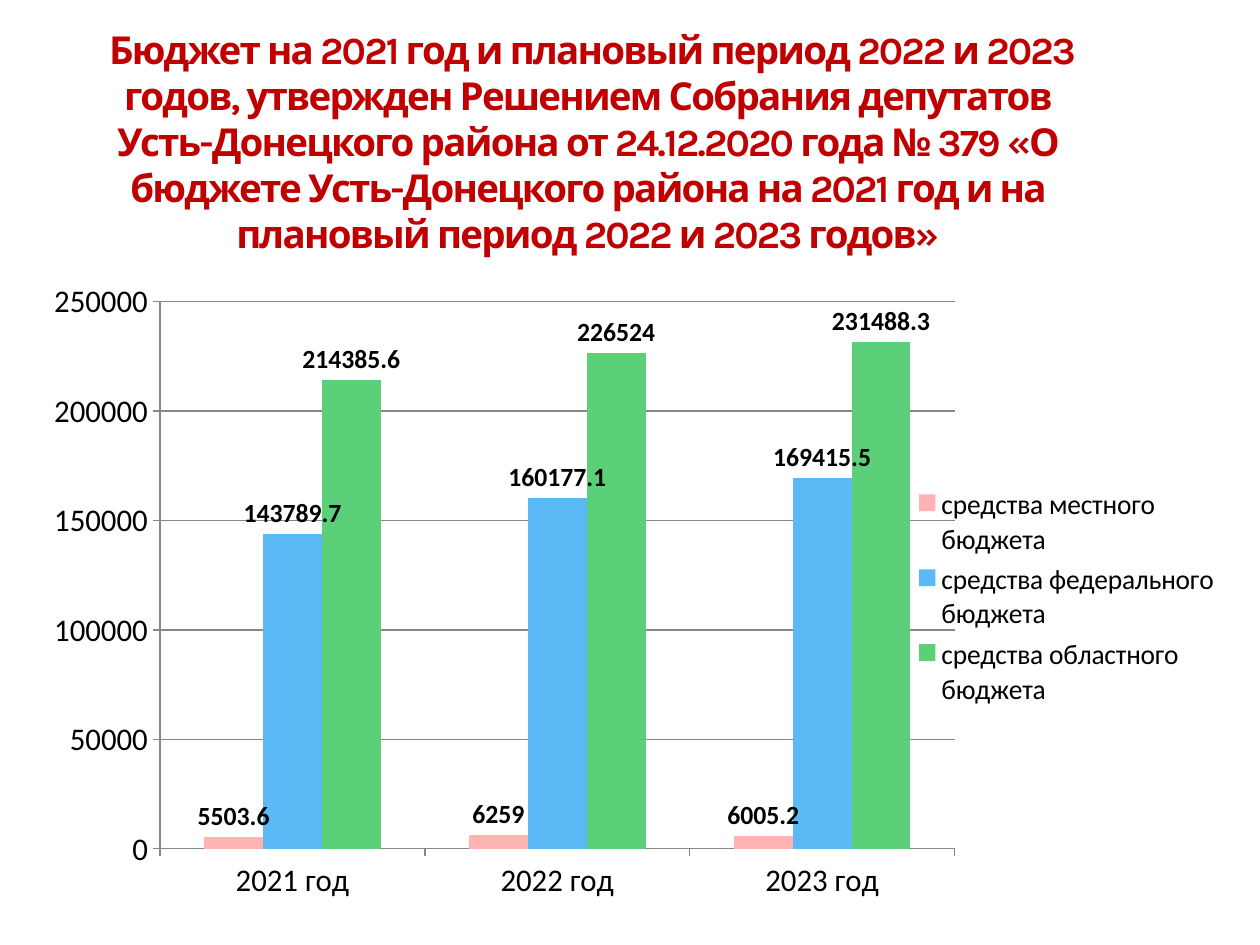
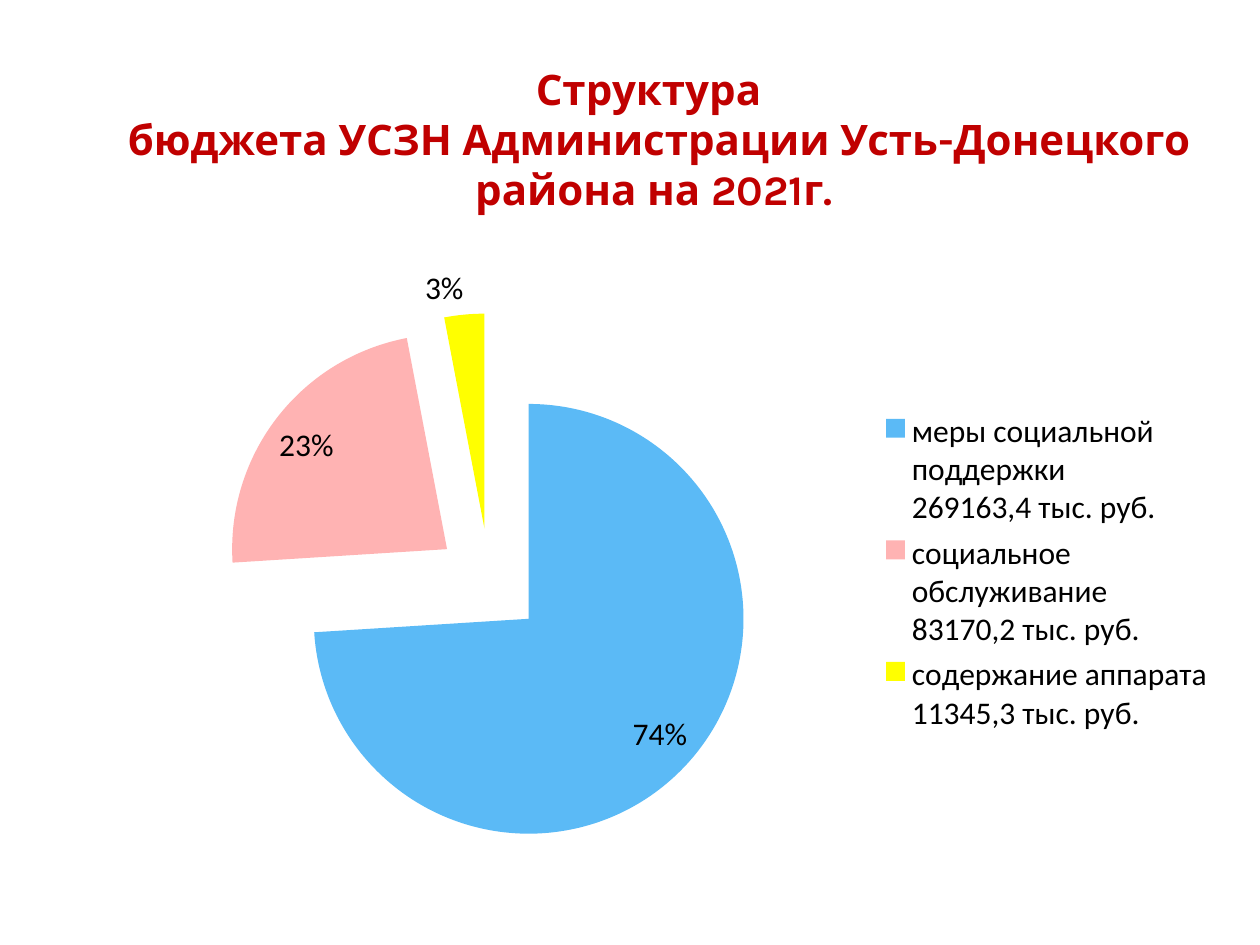
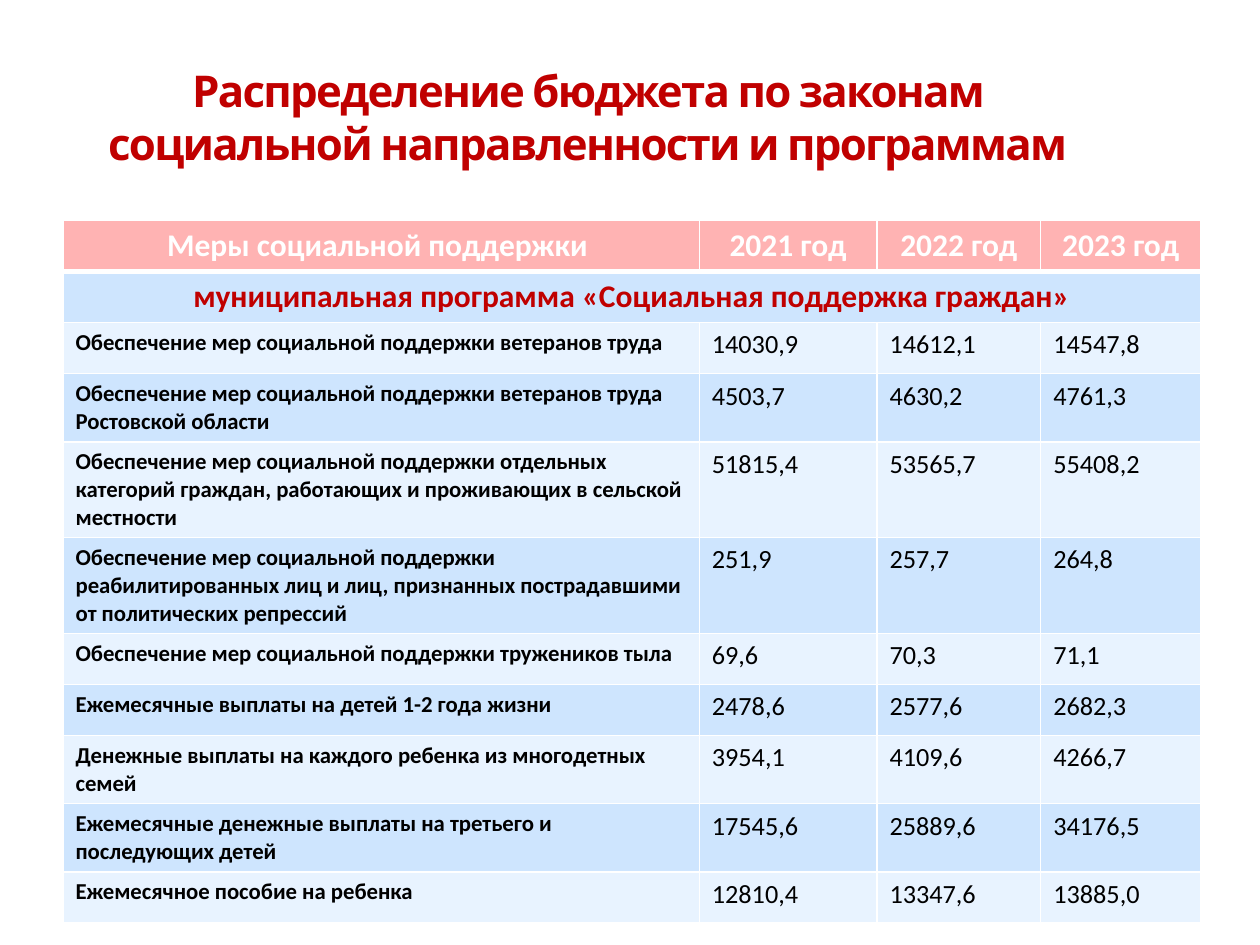
from dataclasses import dataclass

from lxml.etree import SubElement
from pptx import Presentation
from pptx.chart.data import CategoryChartData
from pptx.dml.color import RGBColor
from pptx.enum.chart import XL_CHART_TYPE, XL_LABEL_POSITION, XL_LEGEND_POSITION, XL_TICK_MARK
from pptx.enum.text import MSO_ANCHOR, MSO_AUTO_SIZE, PP_ALIGN
from pptx.oxml import parse_xml
from pptx.oxml.ns import nsdecls, qn
from pptx.util import Inches, Pt


@dataclass(frozen=True)
class Theme:
    title_font: str = "Karla"
    body_font: str = "Calibri"
    red: str = "C00000"
    black: str = "000000"
    white: str = "FFFFFF"
    grey: str = "878787"
    pink: str = "FFB3B3"
    blue: str = "5BBAF6"
    green: str = "5BD078"
    yellow: str = "FFFF00"
    band_dark: str = "CEE5FE"
    band_light: str = "E8F3FF"
    chart_size: int = 18
    legend_size: int = 16
    label_size: int = 15
    heading_size: int = 18
    measure_size: int = 13
    amount_size: int = 15
    thin_line: float = 1
    thick_line: float = 3


def color(code):
    return RGBColor.from_string(code)


def style_font(font, name, size, code, bold):
    font.name, font.size, font.bold = name, Pt(size), bold
    font.color.rgb = color(code)


def manual_layout(x, y, width, height, inner=False):
    """Chart layout whose measures are fractions of the chart frame."""
    layout = parse_xml(f"<c:layout {nsdecls('c')}><c:manualLayout/></c:layout>")
    settings = [("layoutTarget", "inner")] if inner else []
    settings += [("xMode", "edge"), ("yMode", "edge"),
                 ("x", x), ("y", y), ("w", width), ("h", height)]
    for tag, value in settings:
        SubElement(layout[0], qn(f"c:{tag}")).set("val", str(value))
    return layout


def remove_layout(element):
    for layout in element.findall(qn("c:layout")):
        element.remove(layout)


class BudgetDeck:
    def __init__(self, theme):
        self.theme = theme
        self.deck = Presentation()
        self.deck.slide_width, self.deck.slide_height = Inches(10), Inches(7.5)
        self.page = None

    def add_page(self, title, width, height, size, spacing=0):
        """Start a slide; spacing is the title's letter spacing in points."""
        self.page = self.deck.slides.add_slide(self.deck.slide_layouts[5])
        box = self.page.shapes.title
        box.left, box.top = Inches(0.5), Inches(0.3)
        box.width, box.height = Inches(width), Inches(height)
        frame = box.text_frame
        frame.text = title
        frame.word_wrap = True
        frame.auto_size = MSO_AUTO_SIZE.NONE
        frame.vertical_anchor = MSO_ANCHOR.MIDDLE
        para = frame.paragraphs[0]
        para.alignment = PP_ALIGN.CENTER
        for span in para.runs:
            style_font(span.font, self.theme.title_font, size, self.theme.red, True)
            if spacing:
                span.font._element.set("spc", str(spacing * 100))

    def add_chart(self, kind, frame, data, plot_area, legend_area, legend_size):
        chart = self.page.shapes.add_chart(kind, *map(Inches, frame), data).chart
        style_font(chart.font, self.theme.body_font, self.theme.chart_size,
                   self.theme.black, False)
        chart.has_title = False
        area = chart._chartSpace.chart.plotArea
        remove_layout(area)
        area.insert(0, manual_layout(*plot_area, inner=True))

        chart.has_legend = True
        legend = chart.legend
        legend.position = XL_LEGEND_POSITION.RIGHT
        legend.include_in_layout = False
        style_font(legend.font, self.theme.body_font, legend_size, self.theme.black, False)
        remove_layout(legend._element)
        legend._element.find(qn("c:legendPos")).addnext(manual_layout(*legend_area))
        return chart

    def add_column_chart(self, frame, categories, series, plot_area, legend_area):
        """Series are (name, values, color)."""
        data = CategoryChartData()
        data.categories = categories
        for name, values, _ in series:
            data.add_series(name, values)
        chart = self.add_chart(XL_CHART_TYPE.COLUMN_CLUSTERED, frame, data, plot_area,
                               legend_area, self.theme.legend_size)
        plot = chart.plots[0]
        plot.gap_width, plot.vary_by_categories = 150, False
        for columns, (_, _, code) in zip(plot.series, series):
            columns.format.fill.solid()
            columns.format.fill.fore_color.rgb = color(code)
            labels = columns.data_labels
            labels.show_value = True
            labels.position = XL_LABEL_POSITION.OUTSIDE_END
            style_font(labels.font, self.theme.body_font, self.theme.label_size,
                       self.theme.black, True)

        chart.value_axis.has_major_gridlines = True
        chart.value_axis.minimum_scale = 0
        chart.value_axis.maximum_scale = 250000
        chart.value_axis.major_unit = 50000
        lines = [chart.value_axis.major_gridlines.format.line]
        for axis in (chart.category_axis, chart.value_axis):
            axis.major_tick_mark = XL_TICK_MARK.OUTSIDE
            lines.append(axis.format.line)
        for line in lines:
            line.color.rgb = color(self.theme.grey)
            line.width = Pt(0.75)

    def add_pie_chart(self, frame, slices, plot_area, legend_area):
        """Slices are (name, share, color)."""
        data = CategoryChartData()
        data.categories = [name for name, _, _ in slices]
        data.add_series("Структура", [share for _, share, _ in slices])
        chart = self.add_chart(XL_CHART_TYPE.PIE, frame, data, plot_area,
                               legend_area, self.theme.chart_size)
        plot = chart.plots[0]
        pie = plot.series[0]
        pie.format.fill.solid()
        pie.format.fill.fore_color.rgb = color(self.theme.green)
        pie._element.find(qn("c:spPr")).addnext(
            parse_xml(f'<c:explosion {nsdecls("c")} val="25"/>'))
        for index, (_, _, code) in enumerate(slices):
            fill = pie.points[index].format.fill
            fill.solid()
            fill.fore_color.rgb = color(code)
        plot.has_data_labels = True
        labels = plot.data_labels
        labels.show_value, labels.show_percentage = False, True
        labels.number_format, labels.number_format_is_linked = "0%", False
        labels.position = XL_LABEL_POSITION.BEST_FIT
        style_font(labels.font, self.theme.body_font, self.theme.chart_size,
                   self.theme.black, False)

    def fill_cell(self, cell, text, fill, size, code, bold, centred=False):
        cell.fill.solid()
        cell.fill.fore_color.rgb = color(fill)
        cell.text_frame.text = text
        for para in cell.text_frame.paragraphs:
            para.alignment = PP_ALIGN.CENTER if centred else PP_ALIGN.LEFT
            for span in para.runs:
                style_font(span.font, self.theme.body_font, size, code, bold)

    def border_cell(self, cell, top, bottom):
        thin = self.theme.thin_line
        sides = {"L": thin, "R": thin, "T": top, "B": bottom}
        properties = cell._tc.get_or_add_tcPr()
        for index, (side, width) in enumerate(sides.items()):
            properties.insert(index, parse_xml(
                f'<a:ln{side} {nsdecls("a")} w="{Pt(width)}"><a:solidFill>'
                f'<a:srgbClr val="{self.theme.white}"/></a:solidFill></a:ln{side}>'))

    def add_budget_table(self, left, top, widths, height, headings, program, measures):
        """Rows share the height equally and grow where their text needs more."""
        theme = self.theme
        row_count = len(measures) + 2
        table = self.page.shapes.add_table(
            row_count, len(widths), Inches(left), Inches(top),
            Inches(sum(widths)), Inches(height)).table
        table.horz_banding = False
        for column, width in zip(table.columns, widths):
            column.width = Inches(width)

        for column, heading in enumerate(headings):
            self.fill_cell(table.cell(0, column), heading, theme.pink,
                           theme.heading_size, theme.white, True, centred=True)
        table.cell(1, 0).merge(table.cell(1, len(widths) - 1))
        self.fill_cell(table.cell(1, 0), program, theme.band_dark,
                       theme.heading_size, theme.red, True, centred=True)
        for row, (measure, *amounts) in enumerate(measures, 2):
            band = theme.band_dark if row % 2 else theme.band_light
            self.fill_cell(table.cell(row, 0), measure, band,
                           theme.measure_size, theme.black, True)
            for column, amount in enumerate(amounts, 1):
                self.fill_cell(table.cell(row, column), amount, band,
                               theme.amount_size, theme.black, False)

        for row in range(row_count):
            for column in range(len(widths)):
                self.border_cell(table.cell(row, column),
                                 top=theme.thick_line if row == 1 else theme.thin_line,
                                 bottom=theme.thick_line if row == 0 else theme.thin_line)


YEARS = ["2021 год", "2022 год", "2023 год"]

MEASURES = [
    ("Обеспечение мер социальной поддержки ветеранов труда",
     "14030,9", "14612,1", "14547,8"),
    ("Обеспечение мер социальной поддержки ветеранов труда\nРостовской области",
     "4503,7", "4630,2", "4761,3"),
    ("Обеспечение мер социальной поддержки отдельных категорий граждан, "
     "работающих и проживающих в сельской местности",
     "51815,4", "53565,7", "55408,2"),
    ("Обеспечение мер социальной поддержки реабилитированных лиц и лиц, "
     "признанных пострадавшими от политических репрессий",
     "251,9", "257,7", "264,8"),
    ("Обеспечение мер социальной поддержки тружеников тыла", "69,6", "70,3", "71,1"),
    ("Ежемесячные выплаты на детей 1-2 года жизни", "2478,6", "2577,6", "2682,3"),
    ("Денежные выплаты на каждого ребенка из многодетных семей",
     "3954,1", "4109,6", "4266,7"),
    ("Ежемесячные денежные выплаты на третьего и последующих детей",
     "17545,6", "25889,6", "34176,5"),
    ("Ежемесячное пособие на ребенка", "12810,4", "13347,6", "13885,0"),
]


def main():
    theme = Theme()
    budget = BudgetDeck(theme)

    budget.add_page(
        " Бюджет на 2021 год и плановый период 2022 и 2023 годов, утвержден Решением "
        "Собрания депутатов Усть-Донецкого района от 24.12.2020 года № 379 «О бюджете "
        "Усть-Донецкого района на 2021 год и на плановый период 2022 и 2023 годов»",
        width=8.33, height=1.64, size=22, spacing=-1)
    budget.add_column_chart(
        (0.43, 2.19, 9.34, 5.11), YEARS,
        [("средства местного бюджета", (5503.6, 6259, 6005.2), theme.pink),
         ("средства федерального бюджета", (143789.7, 160177.1, 169415.5), theme.blue),
         ("средства областного бюджета", (214385.6, 226524, 231488.3), theme.green)],
        plot_area=(0.07, 0.04, 0.69, 0.85), legend_area=(0.73, 0.32, 0.26, 0.36))

    budget.add_page(
        "Структура \v бюджета УСЗН Администрации Усть-Донецкого района на 2021г.",
        width=9.38, height=1.6, size=24)
    budget.add_pie_chart(
        (0.57, 2.02, 9.21, 5.2),
        [("меры социальной поддержки\n269163,4 тыс. руб.", 74, theme.blue),
         ("социальное обслуживание\n83170,2 тыс. руб.", 23, theme.pink),
         ("содержание аппарата\n11345,3 тыс. руб.", 3, theme.yellow)],
        plot_area=(0.07, 0.09, 0.58, 0.82), legend_area=(0.69, 0.23, 0.3, 0.51))

    budget.add_page("Распределение бюджета по законам социальной направленности и программам",
                    width=8.33, height=1.25, size=25, spacing=-1)
    budget.add_budget_table(
        0.5, 1.75, (5.05, 1.41, 1.3, 1.27), 4.46,
        ["Меры социальной поддержки ", *YEARS],
        "муниципальная программа «Социальная поддержка граждан»", MEASURES)

    budget.deck.save("out.pptx")


if __name__ == "__main__":
    main()
